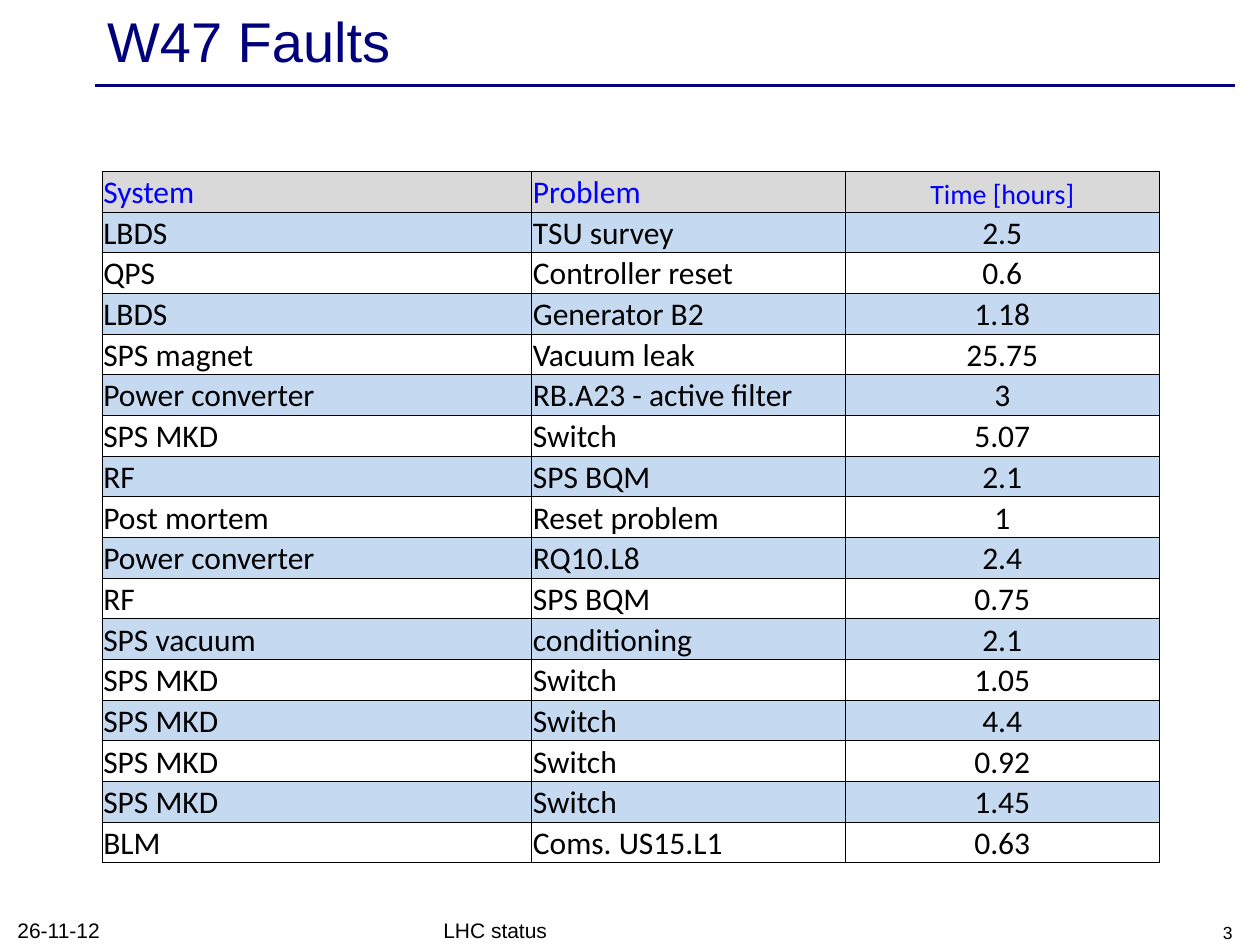
from dataclasses import dataclass

from lxml import etree
from pptx import Presentation
from pptx.dml.color import RGBColor
from pptx.enum import shapes, text
from pptx.oxml import ns
from pptx.util import Inches, Pt


@dataclass(frozen=True)
class Theme:
    navy: str = "00007D"
    blue: str = "0000FF"
    black: str = "000000"
    header_fill: str = "D9D9D9"
    band_fill: str = "C5D9F1"
    heading_font: str = "Arial"
    table_font: str = "Calibri"
    title_size: int = 32
    table_size: int = 18
    unit_size: int = 16
    footer_size: int = 12
    number_size: int = 10
    rule_width: float = 2
    border_width: float = 0.5


THEME = Theme()
LEFT, CENTER, RIGHT = text.PP_ALIGN.LEFT, text.PP_ALIGN.CENTER, text.PP_ALIGN.RIGHT

TITLE = "W47 Faults"
HEADER = ("System", "Problem", "Time [hours]")
FAULTS = [
    ("LBDS", "TSU survey", 2.5),
    ("QPS", "Controller reset", 0.6),
    ("LBDS", "Generator B2", 1.18),
    ("SPS magnet", "Vacuum leak", 25.75),
    ("Power converter", "RB.A23 - active filter", 3),
    ("SPS MKD", "Switch", 5.07),
    ("RF", "SPS BQM", 2.1),
    ("Post mortem", "Reset problem", 1),
    ("Power converter", "RQ10.L8", 2.4),
    ("RF", "SPS BQM", 0.75),
    ("SPS vacuum", "conditioning", 2.1),
    ("SPS MKD", "Switch", 1.05),
    ("SPS MKD", "Switch", 4.4),
    ("SPS MKD", "Switch", 0.92),
    ("SPS MKD", "Switch", 1.45),
    ("BLM", "Coms. US15.L1", 0.63),
]
# wording, (left, top, width, height), size, alignment
FOOTERS = [
    ("LHC status", (3.42, 7.25, 3.17, 0.28), THEME.footer_size, LEFT),
    ("3", (7.55, 7.25, 2.33, 0.28), THEME.number_size, RIGHT),
    ("26-11-12", (0.04, 7.24, 2.33, 0.29), THEME.footer_size, LEFT),
]

SLIDE_SIZE = (10, 7.5)
TITLE_BOX = (0.75, 0.03, 9, 0.57)
RULE = (0.75, 0.68, 9.8, 0.68)
TABLE_LEFT, TABLE_TOP, TABLE_HEIGHT = 0.81, 1.36, 5.49
COLUMN_WIDTHS = (3.41, 2.49, 2.49)
COLUMN_ALIGNMENTS = (LEFT, LEFT, CENTER)
CELL_FORMAT = {
    "margin_left": Inches(0.01),
    "margin_right": Inches(0.01),
    "margin_top": Inches(0.01),
    "margin_bottom": 0,
    "vertical_anchor": text.MSO_ANCHOR.BOTTOM,
}


def inches(values):
    return [Inches(value) for value in values]


def apply_format(target, values):
    for name, value in values.items():
        setattr(target, name, value)


def write(frame, wording, size, color, font_name, alignment):
    paragraph = frame.paragraphs[0]
    paragraph.alignment = alignment
    run = paragraph.add_run()
    run.text = wording
    apply_format(run.font, {"name": font_name, "size": Pt(size), "bold": False})
    run.font.color.rgb = RGBColor.from_string(color)


def add_title(slide):
    title = slide.shapes.title
    box = dict(zip(("left", "top", "width", "height"), inches(TITLE_BOX)))
    apply_format(title, box)
    apply_format(title.text_frame, {
        "auto_size": text.MSO_AUTO_SIZE.NONE,
        "vertical_anchor": text.MSO_ANCHOR.MIDDLE,
    })
    write(title.text_frame, TITLE, THEME.title_size, THEME.navy,
          THEME.heading_font, LEFT)


def add_rule(slide):
    rule = slide.shapes.add_connector(shapes.MSO_CONNECTOR.STRAIGHT, *inches(RULE))
    rule.line.color.rgb = RGBColor.from_string(THEME.navy)
    rule.line.width = Pt(THEME.rule_width)
    etree.SubElement(rule._element.spPr, ns.qn("a:effectLst"))


def add_footers(slide):
    for wording, box, size, alignment in FOOTERS:
        frame = slide.shapes.add_textbox(*inches(box)).text_frame
        apply_format(frame, {
            "word_wrap": True,
            "vertical_anchor": text.MSO_ANCHOR.BOTTOM,
        })
        write(frame, wording, size, THEME.black, THEME.heading_font, alignment)


def add_borders(cell):
    properties = cell._tc.get_or_add_tcPr()
    for side in ("lnL", "lnR", "lnT", "lnB"):
        line = etree.SubElement(properties, ns.qn(f"a:{side}"),
                                w=str(Pt(THEME.border_width)))
        fill = etree.SubElement(line, ns.qn("a:solidFill"))
        etree.SubElement(fill, ns.qn("a:srgbClr"), val=THEME.black)


def fill_cell(cell, row_index):
    """Grey header, then blue and clear rows in turn."""
    if row_index and row_index % 2 == 0:
        cell.fill.background()
        return
    cell.fill.solid()
    color = THEME.band_fill if row_index else THEME.header_fill
    cell.fill.fore_color.rgb = RGBColor.from_string(color)


def add_fault_table(slide):
    rows = [HEADER, *FAULTS]
    box = (TABLE_LEFT, TABLE_TOP, sum(COLUMN_WIDTHS), TABLE_HEIGHT)
    table = slide.shapes.add_table(
        len(rows), len(COLUMN_WIDTHS), *inches(box)).table
    apply_format(table, {"first_row": False, "horz_banding": False})
    for column, width in zip(table.columns, COLUMN_WIDTHS):
        column.width = Inches(width)
    for row_index, row in enumerate(rows):
        color = THEME.black if row_index else THEME.blue
        for column_index, value in enumerate(row):
            cell = table.cell(row_index, column_index)
            apply_format(cell, CELL_FORMAT)
            add_borders(cell)
            fill_cell(cell, row_index)
            size = THEME.unit_size if value == HEADER[-1] else THEME.table_size
            write(cell.text_frame, str(value), size, color, THEME.table_font,
                  COLUMN_ALIGNMENTS[column_index])


def main():
    presentation = Presentation()
    presentation.slide_width, presentation.slide_height = inches(SLIDE_SIZE)
    title_only = presentation.slide_layouts.get_by_name("Title Only")
    slide = presentation.slides.add_slide(title_only)
    add_rule(slide)
    add_title(slide)
    add_footers(slide)
    add_fault_table(slide)
    presentation.save("out.pptx")


if __name__ == "__main__":
    main()
